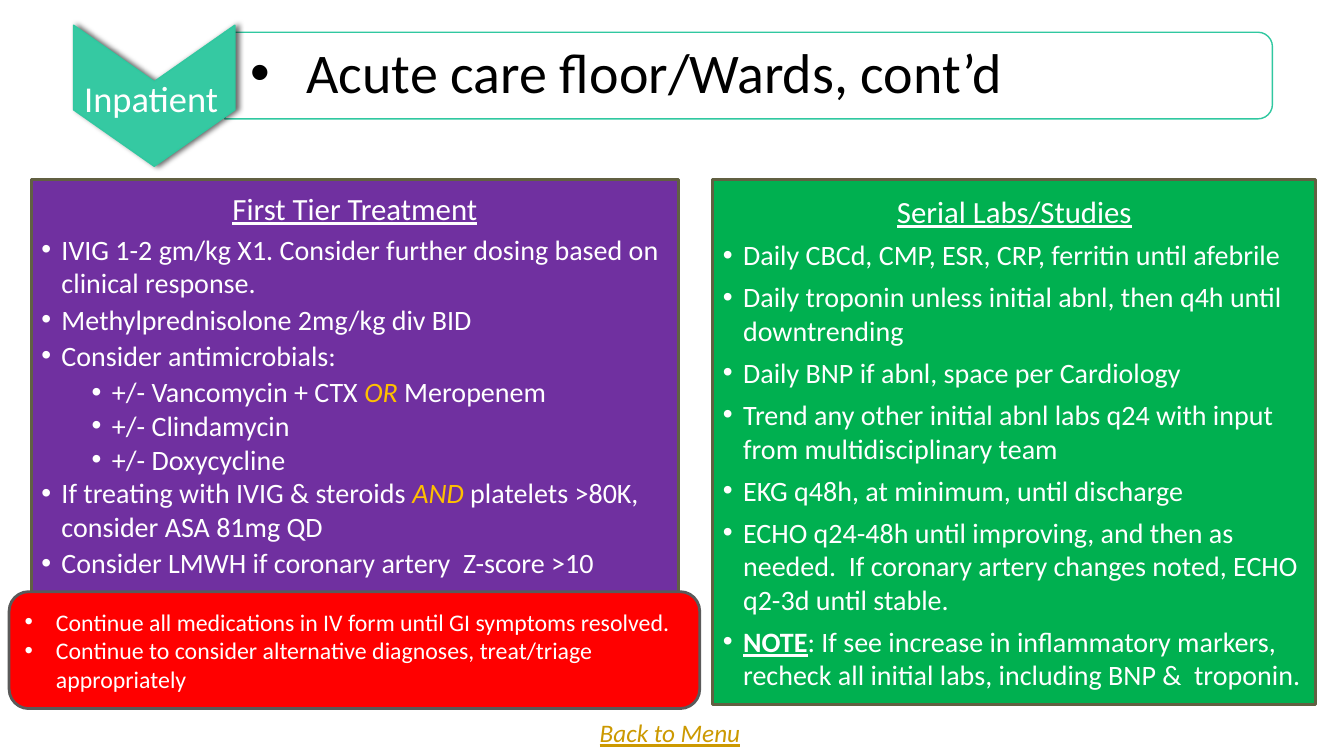
from lxml import etree
from pptx import Presentation
from pptx.dml.color import RGBColor
from pptx.enum.shapes import MSO_SHAPE
from pptx.enum.text import MSO_ANCHOR, MSO_AUTO_SIZE, PP_ALIGN
from pptx.oxml.ns import qn
from pptx.util import Inches, Pt

FONT = "Calibri"
WHITE = RGBColor(0xFF, 0xFF, 0xFF)
BLACK = RGBColor(0x00, 0x00, 0x00)
TEAL = RGBColor(0x35, 0xC9, 0xA2)
TEAL_LINE = RGBColor(0x30, 0xC8, 0xA0)
GREEN = RGBColor(0x00, 0xB0, 0x50)
PURPLE = RGBColor(0x70, 0x30, 0xA0)
RED = RGBColor(0xFF, 0x00, 0x00)
OLIVE = RGBColor(0x61, 0x60, 0x42)
GRAY = RGBColor(0x5A, 0x5A, 0x5A)
AMBER = RGBColor(0xFF, 0xC0, 0x00)
GOLD = RGBColor(0xCC, 0x99, 0x00)

# Each list item is (level, runs); a run is plain text or (text, style)
TREATMENTS = [
    (0, ["IVIG 1-2 gm/kg X1. Consider further dosing based on clinical response."]),
    (0, ["Methylprednisolone 2mg/kg div BID"]),
    (0, ["Consider antimicrobials:"]),
    (1, ["+/- Vancomycin + CTX ", ("OR ", "accent"), "Meropenem"]),
    (1, ["+/- Clindamycin"]),
    (1, ["+/- Doxycycline"]),
    (0, ["If treating with IVIG & steroids ", ("AND", "accent"),
         " platelets >80K, consider ASA 81mg QD"]),
    (0, ["Consider LMWH if coronary artery  Z-score >10"]),
]
LABS = [
    (0, ["Daily CBCd, CMP, ESR, CRP, ferritin until afebrile"]),
    (0, ["Daily troponin unless initial abnl, then q4h until downtrending"]),
    (0, ["Daily BNP if abnl, space per Cardiology"]),
    (0, ["Trend any other initial abnl labs q24 with input from multidisciplinary team"]),
    (0, ["EKG q48h, at minimum, until discharge"]),
    (0, ["ECHO q24-48h until improving, and then as needed.  "
         "If coronary artery changes noted, ECHO q2-3d until stable."]),
    (0, [("NOTE", "note"), ": If see increase in inflammatory markers, "
         "recheck all initial labs, including BNP &  troponin."]),
]
REMINDERS = [
    "Continue all medications in IV form until GI symptoms resolved.",
    "Continue to consider alternative diagnoses, treat/triage appropriately",
]


def place(shape, left, top, width, height):
    shape.left, shape.top = Inches(left), Inches(top)
    shape.width, shape.height = Inches(width), Inches(height)


def paint(shape, fill, line, line_width):
    shape.fill.solid()
    shape.fill.fore_color.rgb = fill
    shape.line.color.rgb = line
    shape.line.width = Pt(line_width)


def set_frame(shape, anchor, left=0.1, top=0.05, right=0.1, bottom=0.05):
    frame = shape.text_frame
    frame.word_wrap = True
    frame.auto_size = MSO_AUTO_SIZE.NONE
    frame.vertical_anchor = anchor
    frame.margin_left, frame.margin_right = Inches(left), Inches(right)
    frame.margin_top, frame.margin_bottom = Inches(top), Inches(bottom)
    return frame


def write(paragraph, runs, size, color=WHITE, align=PP_ALIGN.LEFT, after=0):
    paragraph.alignment = align
    paragraph.line_spacing = 1.0
    paragraph.space_before = Pt(0)
    paragraph.space_after = Pt(after)
    for item in runs:
        text, style = (item, "") if isinstance(item, str) else item
        run = paragraph.add_run()
        run.text = text
        font = run.font
        font.name, font.size = FONT, Pt(size)
        font.color.rgb = AMBER if style == "accent" else color
        font.italic = style in ("accent", "link")
        font.bold = style == "note"
        font.underline = style in ("note", "heading", "link")


def set_bullet(paragraph, margin, hanging, visible=True):
    properties = paragraph._p.get_or_add_pPr()
    properties.set("marL", str(Inches(margin)))
    properties.set("indent", str(-Inches(hanging)))
    if visible:
        etree.SubElement(properties, qn("a:buFont")).set("typeface", "Arial")
        etree.SubElement(properties, qn("a:buChar")).set("char", "•")
    else:
        etree.SubElement(properties, qn("a:buNone"))


def add_soft_shadow(shape):
    effects = etree.SubElement(shape._element.spPr, qn("a:effectLst"))
    shadow = etree.SubElement(effects, qn("a:outerShdw"), blurRad=str(Pt(4)),
                              dist=str(Pt(2)), dir="0", rotWithShape="0")
    color = etree.SubElement(shadow, qn("a:srgbClr"), val="000000")
    etree.SubElement(color, qn("a:alpha"), val="60000")


def add_title_bar(slide, left, top, width, height):
    # Frame with rounded right corners, placed behind the title text
    frame_left = left + (width - height) / 2
    frame_top = top + (height - width) / 2
    bar = slide.shapes.add_shape(
        MSO_SHAPE.ROUND_2_SAME_RECTANGLE, Inches(frame_left), Inches(frame_top),
        Inches(height), Inches(width))
    bar.rotation = 90
    bar.shadow.inherit = False
    paint(bar, WHITE, TEAL_LINE, 1)
    slide.shapes._spTree.insert(2, bar._element)

    # Title text
    title = slide.shapes.title
    place(title, left, top, width, height)
    frame = set_frame(title, MSO_ANCHOR.MIDDLE, 0.19, 0.06, 0.06, 0.06)
    paragraph = frame.paragraphs[0]
    write(paragraph, ["Acute care floor/Wards, cont’d"], 40, BLACK)
    paragraph.line_spacing = 0.9
    set_bullet(paragraph, 0.62, 0.56)


def add_text(slide, left, top, width, height, runs, size, color, align):
    box = slide.shapes.add_textbox(Inches(left), Inches(top), Inches(width), Inches(height))
    frame = set_frame(box, MSO_ANCHOR.TOP)
    write(frame.paragraphs[0], runs, size, color, align)


def add_setting_arrow(slide, left, top, width, height):
    # Downward chevron
    notch = 0.4 * height
    right, middle = left + width, left + width / 2
    points = [(right, top), (right, top + height - notch), (middle, top + height),
              (left, top + height - notch), (left, top), (middle, top + notch)]
    corners = [(Inches(x), Inches(y)) for x, y in points]
    builder = slide.shapes.build_freeform(*corners[0])
    builder.add_line_segments(corners[1:], close=True)
    chevron = builder.convert_to_shape()
    paint(chevron, TEAL, TEAL_LINE, 1)
    add_soft_shadow(chevron)
    # Label
    add_text(slide, left, top + 0.46, width - 0.06, 0.54, ["Inpatient"], 26, WHITE,
             PP_ALIGN.CENTER)


def fill_panel(panel, box, heading, items, color, anchor, top_margin, heading_after, after):
    place(panel, *box)
    paint(panel, color, OLIVE, 2)
    frame = set_frame(panel, anchor, top=top_margin)
    paragraph = frame.paragraphs[0]
    write(paragraph, [(heading, "heading")], 22, align=PP_ALIGN.CENTER, after=heading_after)
    set_bullet(paragraph, 0, 0, visible=False)
    for level, runs in items:
        paragraph = frame.add_paragraph()
        paragraph.level = level
        write(paragraph, runs, 20, after=0 if level else after)
        set_bullet(paragraph, 0.2 + 0.5 * level, 0.2)


def add_reminders(slide, left, top, width, height):
    banner = slide.shapes.add_shape(MSO_SHAPE.ROUNDED_RECTANGLE, Inches(left), Inches(top),
                                    Inches(width), Inches(height))
    banner.shadow.inherit = False
    paint(banner, RED, GRAY, 2)
    frame = set_frame(banner, MSO_ANCHOR.MIDDLE)
    for index, reminder in enumerate(REMINDERS):
        paragraph = frame.add_paragraph() if index else frame.paragraphs[0]
        write(paragraph, [reminder], 17)
        set_bullet(paragraph, 0.31, 0.31)


def main():
    presentation = Presentation()
    presentation.slide_width, presentation.slide_height = Inches(13.33), Inches(7.5)
    slide = presentation.slides.add_slide(presentation.slide_layouts[3])
    treatment_panel, labs_panel = slide.placeholders[1], slide.placeholders[2]

    # Header
    add_title_bar(slide, 2.23, 0.32, 10.39, 0.86)
    add_setting_arrow(slide, 0.73, 0.25, 1.6, 1.4)

    # Two panels
    fill_panel(treatment_panel, (0.31, 1.78, 6.42, 5.21), "First Tier Treatment", TREATMENTS,
               PURPLE, MSO_ANCHOR.TOP, 0.1, 4, 2)
    fill_panel(labs_panel, (7.07, 1.78, 5.98, 5.21), "Serial Labs/Studies", LABS,
               GREEN, MSO_ANCHOR.MIDDLE, 0.05, 6, 6)

    # Banner and footer
    add_reminders(slide, 0.09, 5.87, 6.85, 1.16)
    add_text(slide, 5.85, 7.07, 1.63, 0.4, [("Back to Menu", "link")], 18, GOLD, PP_ALIGN.LEFT)

    presentation.save("out.pptx")


if __name__ == "__main__":
    main()
